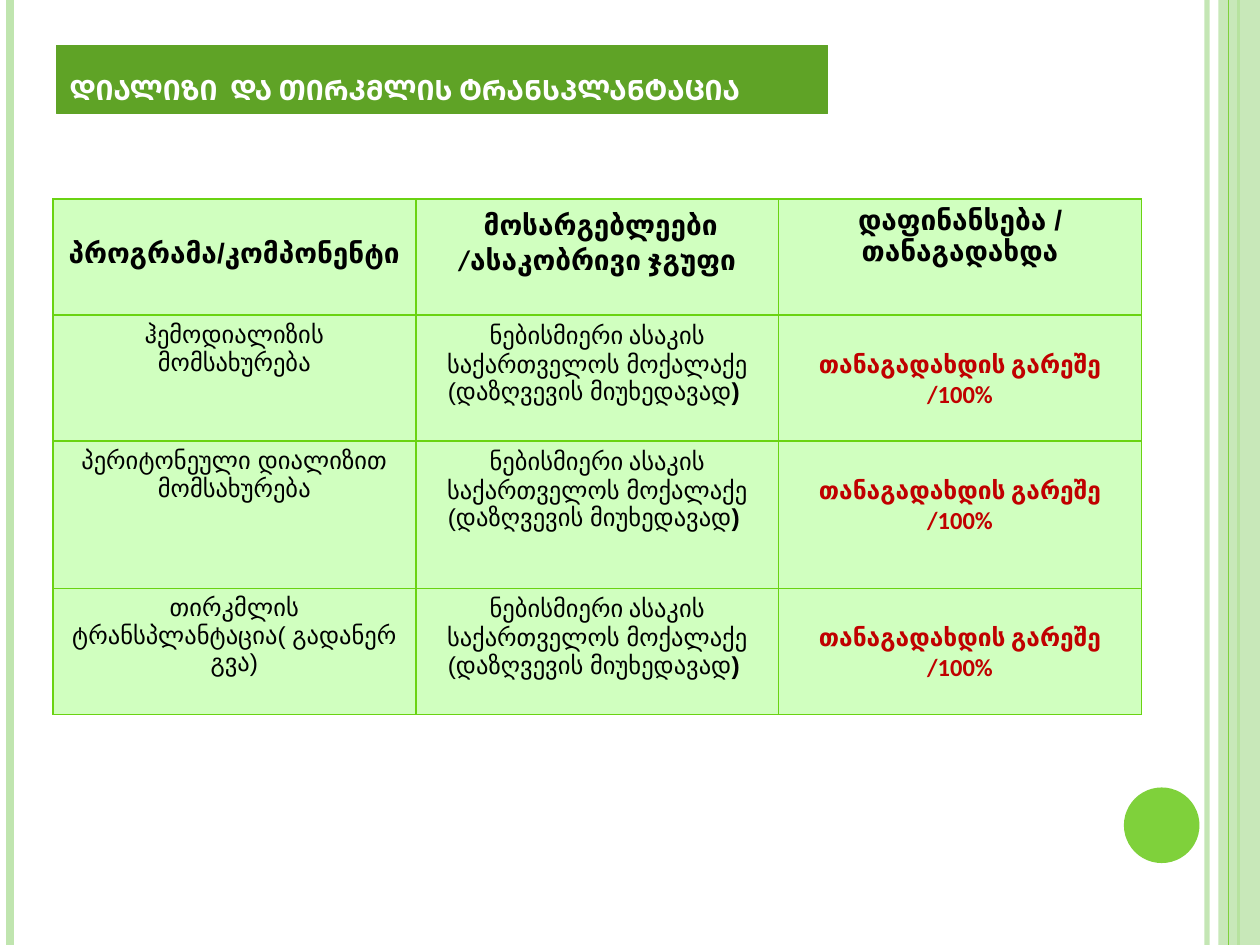
from lxml.etree import SubElement
from pptx import Presentation
from pptx.dml.color import RGBColor
from pptx.enum.shapes import MSO_CONNECTOR, MSO_SHAPE
from pptx.enum.text import MSO_ANCHOR, MSO_AUTO_SIZE, PP_ALIGN
from pptx.oxml.ns import qn
from pptx.util import Inches, Pt

COLORS = {"pale": "C0E5AF", "green": "7FD13B", "title": "5FA326", "border": "6AD312",
          "cell": "D0FFBF", "black": "000000", "red": "C00000", "white": "FFFFFF"}
WIDTH, HEIGHT = 10, 7.5

TITLE = "დიალიზი  და თირკმლის ტრანსპლანტაცია"
SERVICES = ["ჰემოდიალიზის მომსახურება", "პერიტონეული დიალიზით მომსახურება",
            "თირკმლის ტრანსპლანტაცია( გადანერგვა)"]

HEADING = {"name": "Arial", "size": Pt(16), "bold": True}
PLAIN = {"name": "Arial", "size": Pt(14), "bold": False}
CALIBRI = PLAIN | {"name": "Calibri"}
STRONG = PLAIN | {"bold": True}
PAYMENT = CALIBRI | {"bold": True}

HEADER = [
    (0.31, "black", [("პროგრამა/კომპონენტი", HEADING)]),
    (0.05, "black", [(" ", HEADING | {"name": "Calibri", "size": Pt(18)}),
                     ("მოსარგებლეები /ასაკობრივი ჯგუფი", HEADING | {"name": "Calibri"})]),
    (0.05, "black", [("დაფინანსება / თანაგადახდა", HEADING)]),
]
BENEFICIARIES = (0.05, "black", [
    ("ნებისმიერი ასაკის ", CALIBRI),
    ("საქართველოს მოქალაქე (დაზღვევის მიუხედავად", PLAIN), (") ", STRONG)])
FUNDING = (0.28, "red", [("თანაგადახდის გარეშე /100%", PAYMENT)])
ROWS = [HEADER] + [[(0.05, "black", [(service, PLAIN)]), BENEFICIARIES, FUNDING]
                   for service in SERVICES]
ROW_HEIGHTS = [0.92, 1, 1.17, 1]
COLUMN_WIDTH = 2.88

BACK_LINES = [(9.58, "pale", 3, 93), (0.08, "pale", 4.5, 100), (9.83, "green", 1.5, 100)]
FRONT_LINES = [(9.75, "green", 0.75, 100)]


def color(name):
    return RGBColor.from_string(COLORS[name])


def set_fill(item, name):
    item.fill.solid()
    item.fill.fore_color.rgb = color(name)


def set_alpha(element, percent):
    for tint in element.iter(qn("a:srgbClr")):
        SubElement(tint, qn("a:alpha"), val=str(percent * 1000))


def add_rule(slide, x, name, weight, opacity):
    rule = slide.shapes.add_connector(
        MSO_CONNECTOR.STRAIGHT, Inches(x), 0, Inches(x), Inches(HEIGHT))
    rule.line.color.rgb = color(name)
    rule.line.width = Pt(weight)
    properties = rule._element.spPr
    if opacity < 100:
        set_alpha(properties, opacity)
    SubElement(properties, qn("a:effectLst"))


def add_plain(slide, kind, bounds, name):
    shape = slide.shapes.add_shape(kind, *map(Inches, bounds))
    shape.shadow.inherit = False
    set_fill(shape, name)
    shape.line.fill.background()
    return shape


def add_span(para, text, font, name):
    span = para.add_run()
    span.text = text
    for key, value in font.items():
        setattr(span.font, key, value)
    span.font.color.rgb = color(name)
    return span


def add_title(slide):
    box = slide.shapes.title
    box.left, box.top, box.width, box.height = map(Inches, (0.45, 0.36, 6.12, 0.54))
    geometry = SubElement(box._element.spPr, qn("a:prstGeom"), prst="roundRect")
    SubElement(geometry, qn("a:avLst"))
    set_fill(box, "title")
    box.line.color.rgb = color("title")
    box.line.width = Pt(0.75)
    frame = box.text_frame
    frame.auto_size = MSO_AUTO_SIZE.NONE
    frame.word_wrap = True
    frame.vertical_anchor = MSO_ANCHOR.BOTTOM
    para = frame.paragraphs[0]
    para.alignment = PP_ALIGN.LEFT
    span = add_span(para, TITLE, {"name": "Cambria", "size": Pt(20), "bold": True}, "white")
    span.font._element.set("cap", "small")


def add_borders(cell):
    properties = cell._tc.get_or_add_tcPr()
    for index, side in enumerate(("lnL", "lnR", "lnT", "lnB")):
        edge = properties.makeelement(qn(f"a:{side}"), {"w": str(Pt(1))})
        SubElement(SubElement(edge, qn("a:solidFill")), qn("a:srgbClr"), val=COLORS["border"])
        properties.insert(index, edge)


def add_program_table(slide):
    table = slide.shapes.add_table(
        len(ROWS), len(HEADER), Inches(0.42), Inches(1.58),
        Inches(COLUMN_WIDTH * len(HEADER)), Inches(sum(ROW_HEIGHTS))).table
    for column in table.columns:
        column.width = Inches(COLUMN_WIDTH)
    for row, height, contents in zip(table.rows, ROW_HEIGHTS, ROWS):
        row.height = Inches(height)
        for cell, (margin, name, spans) in zip(row.cells, contents):
            set_fill(cell, "cell")
            add_borders(cell)
            cell.margin_top = Inches(margin)
            para = cell.text_frame.paragraphs[0]
            para.alignment = PP_ALIGN.CENTER
            for text, font in spans:
                add_span(para, text, font, name)


def main():
    deck = Presentation()
    deck.slide_width, deck.slide_height = Inches(WIDTH), Inches(HEIGHT)
    slide = deck.slides.add_slide(deck.slide_layouts[5])
    for rule in BACK_LINES:
        add_rule(slide, *rule)
    band = add_plain(slide, MSO_SHAPE.RECTANGLE, (9.67, 0, 0.33, HEIGHT), "pale")
    set_alpha(band._element.spPr, 87)
    for rule in FRONT_LINES:
        add_rule(slide, *rule)
    add_plain(slide, MSO_SHAPE.OVAL, (8.92, 6.25, 0.6, 0.6), "green")
    add_title(slide)
    add_program_table(slide)
    deck.save("out.pptx")


if __name__ == "__main__":
    main()
